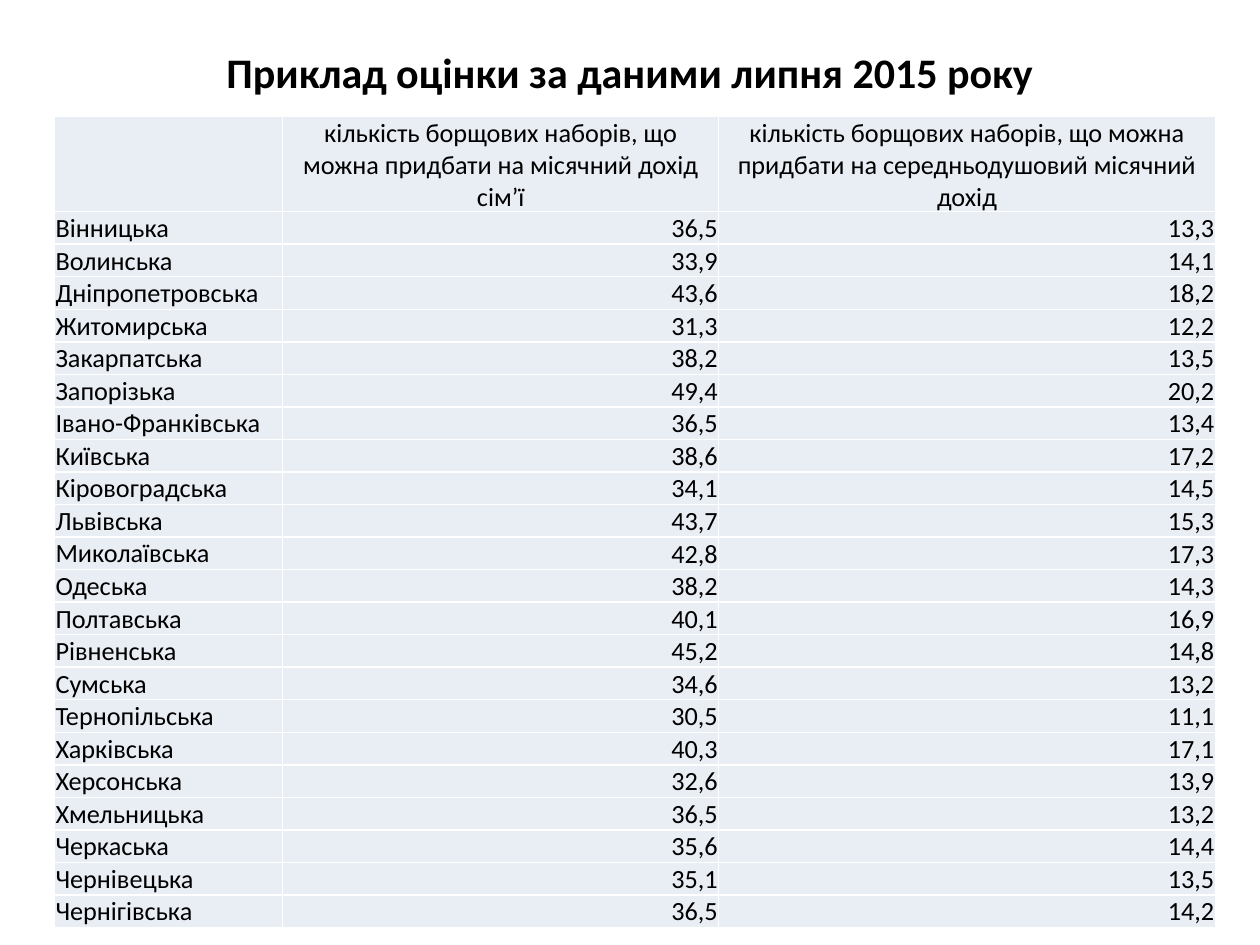
from dataclasses import dataclass

from lxml import etree
from pptx import Presentation
from pptx.dml.color import RGBColor
from pptx.enum.text import MSO_ANCHOR, PP_ALIGN
from pptx.oxml.ns import qn
from pptx.util import Cm, Pt

LEFT, CENTER, RIGHT = PP_ALIGN.LEFT, PP_ALIGN.CENTER, PP_ALIGN.RIGHT
MIDDLE, BOTTOM = MSO_ANCHOR.MIDDLE, MSO_ANCHOR.BOTTOM


@dataclass(frozen=True)
class Theme:
    font: str = "Calibri"
    ink: str = "000000"
    cell: str = "E9EDF4"
    rule: str = "FFFFFF"
    rule_width: int = Pt(1)
    title_size: int = Pt(24)
    table_size: int = Pt(15)


@dataclass(frozen=True)
class Region:
    name: str
    family: str
    per_person: str


THEME = Theme()
TITLE = "Приклад оцінки за даними липня 2015 року"
HEADINGS = (
    "",
    "кількість борщових наборів, що можна придбати на місячний дохід сім’ї",
    "кількість борщових наборів, що можна придбати на середньодушовий місячний дохід",
)
REGIONS = (
    Region("Вінницька", "36,5", "13,3"),
    Region("Волинська", "33,9", "14,1"),
    Region("Дніпропетровська", "43,6", "18,2"),
    Region("Житомирська", "31,3", "12,2"),
    Region("Закарпатська", "38,2", "13,5"),
    Region("Запорізька", "49,4", "20,2"),
    Region("Івано-Франківська", "36,5", "13,4"),
    Region("Київська", "38,6", "17,2"),
    Region("Кіровоградська", "34,1", "14,5"),
    Region("Львівська", "43,7", "15,3"),
    Region("Миколаївська", "42,8", "17,3"),
    Region("Одеська", "38,2", "14,3"),
    Region("Полтавська", "40,1", "16,9"),
    Region("Рівненська", "45,2", "14,8"),
    Region("Сумська", "34,6", "13,2"),
    Region("Тернопільська", "30,5", "11,1"),
    Region("Харківська", "40,3", "17,1"),
    Region("Херсонська", "32,6", "13,9"),
    Region("Хмельницька", "36,5", "13,2"),
    Region("Черкаська", "35,6", "14,4"),
    Region("Чернівецька", "35,1", "13,5"),
    Region("Чернігівська", "36,5", "14,2"),
)
COLUMN_WIDTHS = (Cm(4.6), Cm(8.79), Cm(10.01))
HEADER_HEIGHT, REGION_HEIGHT, TABLE_HEIGHT = Cm(1.6), Cm(0.58), Cm(16.43)


def add_text(paragraph, text: str, size: int, align: PP_ALIGN, bold: bool = False) -> None:
    paragraph.alignment = align
    run = paragraph.add_run()
    run.text = text
    run.font.name = THEME.font
    run.font.size = size
    run.font.bold = bold
    run.font.color.rgb = RGBColor.from_string(THEME.ink)


def add_borders(cell) -> None:
    properties = cell._tc.get_or_add_tcPr()
    for position, side in enumerate(("lnL", "lnR", "lnT", "lnB")):
        line = etree.Element(qn(f"a:{side}"), w=str(THEME.rule_width))
        fill = etree.SubElement(line, qn("a:solidFill"))
        etree.SubElement(fill, qn("a:srgbClr"), val=THEME.rule)
        properties.insert(position, line)


def fill_cell(cell, text: str, align: PP_ALIGN, anchor: MSO_ANCHOR) -> None:
    cell.fill.solid()
    cell.fill.fore_color.rgb = RGBColor.from_string(THEME.cell)
    add_borders(cell)
    cell.margin_left = cell.margin_right = cell.margin_top = Cm(0.02)
    cell.margin_bottom = 0
    cell.vertical_anchor = anchor
    if text:
        add_text(cell.text_frame.paragraphs[0], text, THEME.table_size, align)


def add_title(slide) -> None:
    title = slide.shapes.add_textbox(Cm(1.27), Cm(0.76), Cm(22.86), Cm(1.37))
    title.text_frame.word_wrap = True
    title.text_frame.vertical_anchor = MIDDLE
    add_text(title.text_frame.paragraphs[0], TITLE, THEME.title_size, CENTER, bold=True)


def add_region_table(slide) -> None:
    frame = slide.shapes.add_table(
        len(REGIONS) + 1, len(HEADINGS), Cm(1.1), Cm(2.34), sum(COLUMN_WIDTHS), TABLE_HEIGHT
    )
    table = frame.table
    for column, width in zip(table.columns, COLUMN_WIDTHS):
        column.width = width
    for index, row in enumerate(table.rows):
        row.height = REGION_HEIGHT if index else HEADER_HEIGHT
    frame.height = TABLE_HEIGHT

    for column, heading in enumerate(HEADINGS):
        fill_cell(table.cell(0, column), heading, CENTER, MIDDLE)
    for row, region in enumerate(REGIONS, start=1):
        fill_cell(table.cell(row, 0), region.name, LEFT, BOTTOM)
        fill_cell(table.cell(row, 1), region.family, RIGHT, MIDDLE)
        fill_cell(table.cell(row, 2), region.per_person, RIGHT, MIDDLE)


def main() -> None:
    presentation = Presentation()
    presentation.slide_width, presentation.slide_height = Cm(25.4), Cm(19.05)
    slide = presentation.slides.add_slide(presentation.slide_layouts[6])
    add_title(slide)
    add_region_table(slide)
    presentation.save("out.pptx")


if __name__ == "__main__":
    main()
